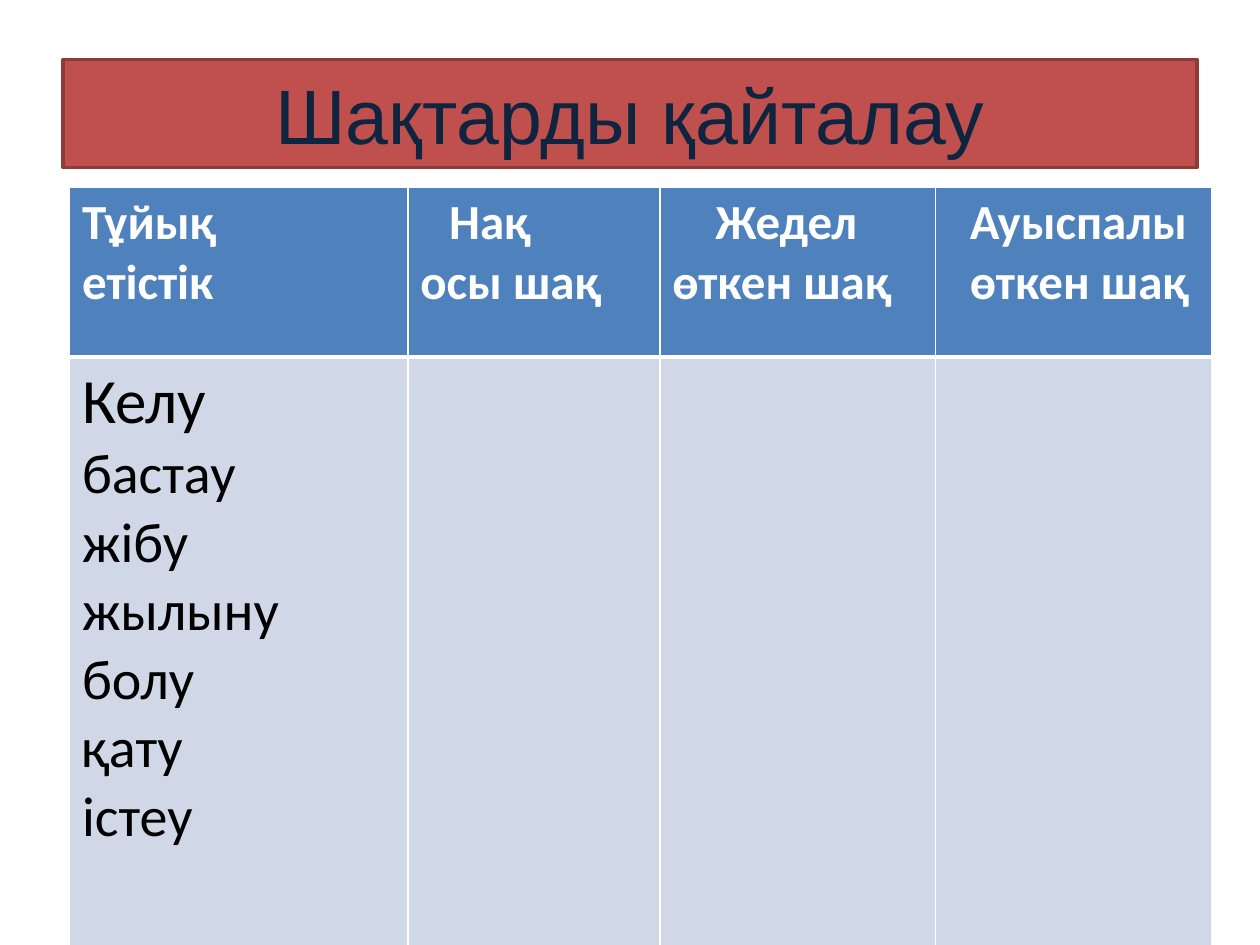
import pptx
import pptx.dml.color
import pptx.enum.text
import pptx.util
from pptx.oxml.ns import qn
from lxml import etree

Cm = pptx.util.Cm
Pt = pptx.util.Pt


def color(hex_text):
    return pptx.dml.color.RGBColor.from_string(hex_text)


def write(p, text, size, ink, font="Calibri", bold=False,
          margin=0, first=0, align=None):
    """Put text in a paragraph; margin and first-line indent are in cm."""
    pPr = p._p.get_or_add_pPr()
    pPr.set("marL", str(Cm(margin)))
    pPr.set("indent", str(Cm(first)))
    if align is not None:
        p.alignment = align
    r = p.add_run()
    r.text = text
    r.font.name = font
    r.font.size = Pt(size)
    r.font.bold = bold
    r.font.color.rgb = color(ink)


class Deck:
    RED, RED_EDGE, NAVY = "C0504D", "8E3B39", "0F243E"
    BLUE, PALE, WHITE, BLACK = "4F81BD", "D0D8E8", "FFFFFF", "000000"

    def __init__(self):
        self.prs = pptx.Presentation()
        self.prs.slide_width = Cm(25.4)
        self.prs.slide_height = Cm(19.05)
        self.s = None

    def add_slide(self):
        self.s = self.prs.slides.add_slide(self.prs.slide_layouts[5])

    def title(self, text, left, top, width, height):
        sp = self.s.shapes.title
        sp.left, sp.top, sp.width, sp.height = map(Cm, (left, top, width, height))
        sp.fill.solid()
        sp.fill.fore_color.rgb = color(self.RED)
        sp.line.color.rgb = color(self.RED_EDGE)
        sp.line.width = Pt(2)
        tf = sp.text_frame
        tf.word_wrap = True
        tf.vertical_anchor = pptx.enum.text.MSO_ANCHOR.MIDDLE
        write(tf.paragraphs[0], text, 44, self.NAVY, font="Arial",
              align=pptx.enum.text.PP_ALIGN.CENTER)

    def table(self, left, top, widths, heights):
        frame = self.s.shapes.add_table(
            len(heights), len(widths), Cm(left), Cm(top),
            Cm(sum(widths)), Cm(sum(heights)))
        table = frame.table
        for column, width in zip(table.columns, widths):
            column.width = Cm(width)
        for row, height in zip(table.rows, heights):
            row.height = Cm(height)
        return table

    def cell(self, cell, lines, fill, borders, **style):
        """Fill a cell with lines of (text, format)."""
        cell.fill.solid()
        cell.fill.fore_color.rgb = color(fill)
        self.borders(cell, borders)
        tf = cell.text_frame
        for i, (text, extra) in enumerate(lines):
            p = tf.add_paragraph() if i else tf.paragraphs[0]
            write(p, text, **{**style, **extra})

    def borders(self, cell, widths):
        """Set white borders; widths are left, right, top, bottom in points."""
        tcPr = cell._tc.get_or_add_tcPr()
        for i, (side, width) in enumerate(zip("LRTB", widths)):
            ln = etree.Element(qn("a:ln" + side), w=str(Pt(width)))
            solid = etree.SubElement(ln, qn("a:solidFill"))
            etree.SubElement(solid, qn("a:srgbClr"), val=self.WHITE)
            tcPr.insert(i, ln)


def main():
    deck = Deck()
    deck.add_slide()
    deck.title("Шақтарды қайталау", 1.27, 1.2, 22.86, 2.18)

    # Tense table: verbs in the first column, empty cells for the answers
    table = deck.table(1.4, 3.77, [6.82, 5.08, 5.56, 5.56], [3.43, 13.84])
    headers = [
        [("Тұйық", {}), ("етістік", {})],
        [("Нақ", {"first": 0.58}), ("осы шақ", {})],
        [("Жедел өткен шақ", {"first": 0.87})],
        [("Ауыспалы өткен шақ", {"margin": 0.44})],
    ]
    verbs = [("Келу", {"size": 36})]
    verbs += [(verb, {}) for verb in
              ("бастау", "жібу", "жылыну", "болу", "қату", "істеу")]

    for col, header in enumerate(headers):
        deck.cell(table.cell(0, col), header, deck.BLUE, (1, 1, 1, 3),
                  size=28, ink=deck.WHITE, bold=True)
        deck.cell(table.cell(1, col), [] if col else verbs, deck.PALE,
                  (1, 1, 3, 1), size=32, ink=deck.BLACK)

    deck.prs.save("out.pptx")


if __name__ == "__main__":
    main()
